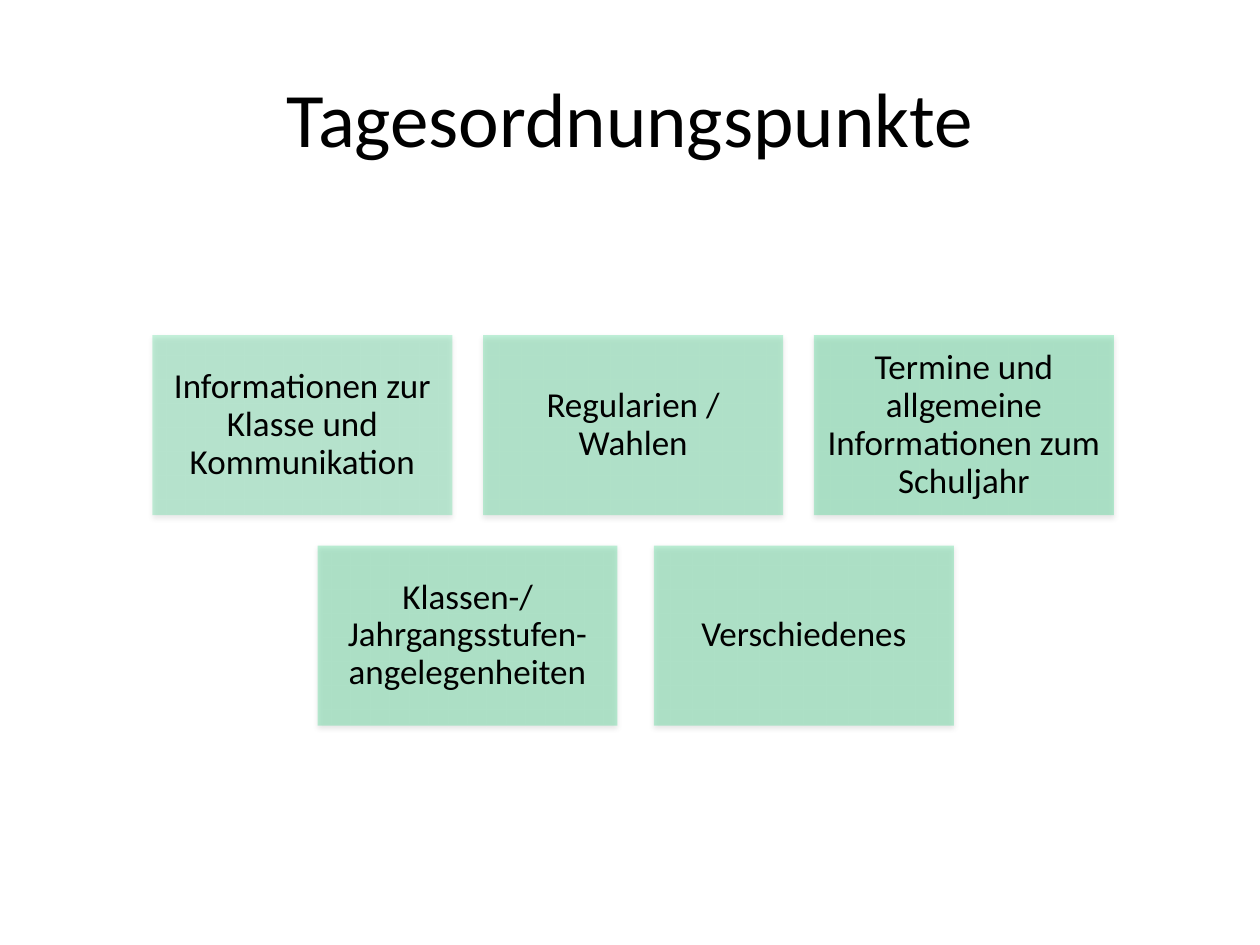
from dataclasses import dataclass
from lxml.etree import SubElement
from pptx import Presentation
from pptx.dml.color import RGBColor
from pptx.enum.shapes import MSO_SHAPE
from pptx.enum.text import MSO_ANCHOR, PP_ALIGN
from pptx.oxml.ns import qn
from pptx.util import Inches, Pt


@dataclass(frozen=True)
class Theme:
    font: str = "Calibri"
    ink: str = "000000"
    green: str = "00CC66"
    title: int = 44
    body: int = 20


class Deck:
    def __init__(self, theme, slide):
        self.theme = theme
        self.slide = slide
        self.group = slide.shapes.add_group_shape()

    def text(self, shapes, words, box, size, inset, space=1.0):
        frame = shapes.add_textbox(*map(Inches, box)).text_frame
        sides = ("left", "top", "right", "bottom")
        form = {f"margin_{side}": Inches(pad) for side, pad in zip(sides, inset)}
        form |= {"word_wrap": True, "vertical_anchor": MSO_ANCHOR.MIDDLE}
        for name, value in form.items():
            setattr(frame, name, value)
        para = frame.paragraphs[0]
        para.text = words
        para.alignment = PP_ALIGN.CENTER
        para.line_spacing = space
        for name, value in {"name": self.theme.font, "size": Pt(size)}.items():
            setattr(para.font, name, value)
        para.font.color.rgb = RGBColor.from_string(self.theme.ink)

    def title(self, words, box):
        self.text(self.slide.shapes, words, box, self.theme.title, (0.1, 0.05, 0.1, 0.05))

    def alpha(self, color, share):
        SubElement(color, qn("a:alpha"), val=str(share * 1000))

    def shade(self, shape):
        shape.shadow.inherit = False
        effects = shape.element.spPr.find(qn("a:effectLst"))
        form = {"blurRad": Pt(3.1), "dist": Pt(1.6), "dir": 90 * 60000, "rotWithShape": 0}
        outer = SubElement(effects, qn("a:outerShdw"), {k: str(int(v)) for k, v in form.items()})
        self.alpha(SubElement(outer, qn("a:srgbClr"), val=self.theme.ink), 38)

    def card(self, words, box, share):
        shapes = self.group.shapes
        rect = shapes.add_shape(MSO_SHAPE.RECTANGLE, *map(Inches, box))
        rect.fill.solid()
        rect.fill.fore_color.rgb = RGBColor.from_string(self.theme.green)
        self.alpha(rect.element.spPr.find(qn("a:solidFill"))[0], share)
        rect.line.fill.background()
        self.shade(rect)
        self.text(shapes, words, box, self.theme.body, (0.08,) * 4, 0.9)


def main():
    """Build the agenda slide with its two rows of topic cards."""
    prs = Presentation()
    prs.slide_width, prs.slide_height = Inches(10), Inches(7.5)
    deck = Deck(Theme(), prs.slides.add_slide(prs.slide_layouts[6]))
    deck.title("Tagesordnungspunkte", (0.5, 0.3, 9, 1.25))
    wide, high = 2.38, 1.43
    rows = [
        (1.21, 2.66, 2.625, [
            ("Informationen zur Klasse und Kommunikation", 22),
            ("Regularien / Wahlen", 24),
            ("Termine und allgemeine Informationen zum Schuljahr", 26),
        ]),
        (2.52, 4.33, 2.67, [
            ("Klassen-/Jahrgangsstufen-angelegenheiten", 25),
            ("Verschiedenes", 25),
        ]),
    ]
    for left, top, step, topics in rows:
        for col, (words, share) in enumerate(topics):
            deck.card(words, (left + col * step, top, wide, high), share)
    prs.save("out.pptx")


if __name__ == "__main__":
    main()
